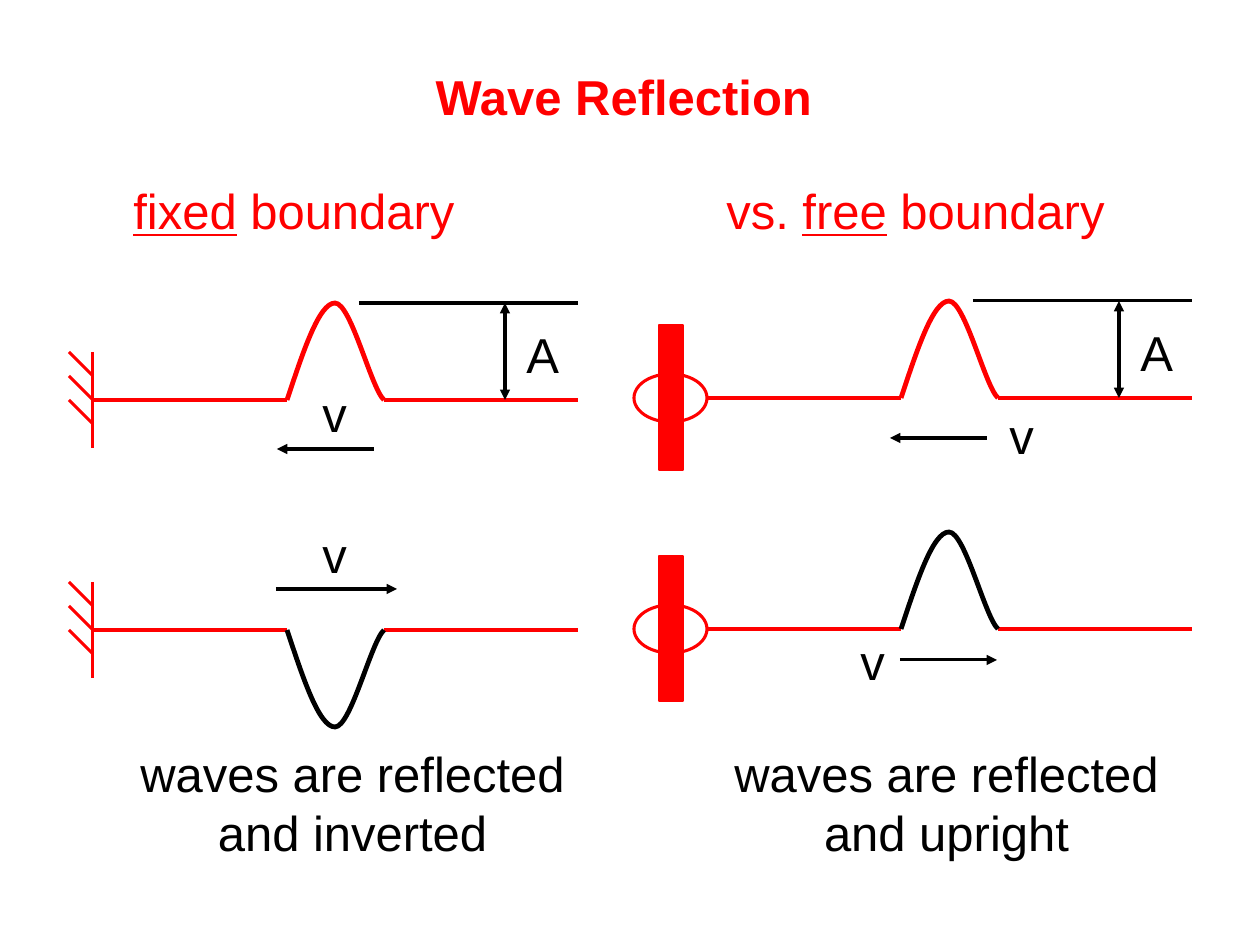
import dataclasses

import pptx
import pptx.dml.color
import pptx.enum.shapes
import pptx.enum.text
import pptx.oxml.ns
import pptx.util
from lxml import etree

EMU_PER_PX = 914400 / 126
PULSE = 97                  # width and height of a pulse
PULSE_START = 194           # from the boundary end of the string
STRING_LENGTH = 485
SHAPES = pptx.enum.shapes.MSO_SHAPE
ALIGN = pptx.enum.text.PP_ALIGN
qn = pptx.oxml.ns.qn


@dataclasses.dataclass(frozen=True)
class Theme:
    red: str = "FF0000"
    black: str = "000000"
    white: str = "FFFFFF"
    font: str = "Arial"
    text_size: float = 28
    thin: float = 1.75
    thick: float = 2.75
    hairline: float = 0.75


THEME = Theme()
FRAME_FORMAT = {
    "word_wrap": False,
    "auto_size": pptx.enum.text.MSO_AUTO_SIZE.SHAPE_TO_FIT_TEXT,
    "vertical_anchor": pptx.enum.text.MSO_ANCHOR.MIDDLE,
}


def px(length):
    return pptx.util.Emu(round(length * EMU_PER_PX))


def rgb(color):
    return pptx.dml.color.RGBColor.from_string(color)


def apply_format(target, values):
    for name, value in values.items():
        setattr(target, name, value)


def set_line(line, color, width):
    line.color.rgb = rgb(color)
    line.width = pptx.util.Pt(width)


# Text: each paragraph is a list of (text, underlined) runs
def write_text(holder, paragraphs, color, align=ALIGN.LEFT, bold=False):
    frame = holder.text_frame
    apply_format(frame, FRAME_FORMAT)
    for index, runs in enumerate(paragraphs):
        paragraph = frame.add_paragraph() if index else frame.paragraphs[0]
        paragraph.alignment = align
        for text, underlined in runs:
            run = paragraph.add_run()
            run.text = text
            apply_format(run.font, {
                "name": THEME.font, "size": pptx.util.Pt(THEME.text_size),
                "bold": bold, "underline": underlined,
            })
            run.font.color.rgb = rgb(color)


def add_text(slide, box, paragraphs, color, align=ALIGN.LEFT):
    label = slide.shapes.add_textbox(*map(px, box))
    write_text(label, paragraphs, color, align)


def add_line(slide, start, end, color, width, arrow=False):
    line = slide.shapes.add_connector(
        pptx.enum.shapes.MSO_CONNECTOR.STRAIGHT, *map(px, (*start, *end)))
    set_line(line.line, color, width)
    if arrow:
        etree.SubElement(line.line._get_or_add_ln(), qn("a:tailEnd"), type="triangle")
    etree.SubElement(line._element.spPr, qn("a:effectLst"))


def add_solid(slide, preset, box, fill, width):
    solid = slide.shapes.add_shape(preset, *map(px, box))
    solid.shadow.inherit = False
    solid.fill.solid()
    solid.fill.fore_color.rgb = rgb(fill)
    set_line(solid.line, THEME.red, width)


# A pulse is two cubic curves; direction is -1 for upright, 1 for inverted
def add_pulse(slide, x, y, color, direction=-1):
    controls = [(16, 48), (32, PULSE), (48, PULSE), (64, PULSE), (84, 12), (PULSE, 0)]
    points = [(px(x + dx), px(y + direction * dy)) for dx, dy in controls]
    builder = slide.shapes.build_freeform(px(x), px(y))
    builder.add_line_segments(points, close=False)
    pulse = builder.convert_to_shape()
    pulse.shadow.inherit = False
    pulse.fill.background()
    set_line(pulse.line, color, THEME.thick)
    # Turn every three segments into one cubic curve
    segments = list(pulse._element.iter(qn("a:lnTo")))
    outline = segments[0].getparent()
    for first in range(0, len(segments), 3):
        curve = etree.SubElement(outline, qn("a:cubicBezTo"))
        for segment in segments[first:first + 3]:
            curve.append(segment[0])
            outline.remove(segment)


def add_string(slide, x, y):
    for start, end in ((0, PULSE_START), (PULSE_START + PULSE, STRING_LENGTH)):
        add_line(slide, (x + start, y), (x + end, y), THEME.red, THEME.thick)


def add_fixed_wall(slide, x, y):
    add_line(slide, (x, y - 48), (x, y + 48), THEME.red, THEME.thin)
    for hatch_y in range(y - 24, y + 25, 24):
        add_line(slide, (x, hatch_y), (x - 24, hatch_y - 24), THEME.red, THEME.thin)


def add_free_ring(slide, x, y):
    add_solid(slide, SHAPES.OVAL, (x - 73, y - 24, 73, 48), THEME.white, THEME.thin)
    add_solid(slide, SHAPES.RECTANGLE, (x - 48, y - 73, 24, 145),
              THEME.red, THEME.hairline)


def add_amplitude(slide, x, y):
    crest, middle, arrow_x = y - PULSE, y - 48, x + 412
    add_line(slide, (x + 266, crest), (x + STRING_LENGTH, crest),
             THEME.black, THEME.thin)
    for tip in (crest, y):
        add_line(slide, (arrow_x, middle), (arrow_x, tip), THEME.black, THEME.thin, True)
    add_text(slide, (x + 421, y - 82, 72, 72), [[("A", False)]], THEME.black)


def add_velocity(slide, start_x, end_x, y, label_at):
    add_line(slide, (start_x, y), (end_x, y), THEME.black, THEME.thin, True)
    add_text(slide, (*label_at, 63, 72), [[("v", False)]], THEME.black)


def main():
    presentation = pptx.Presentation()
    apply_format(presentation, {"slide_width": px(1260), "slide_height": px(945)})
    slide = presentation.slides.add_slide(presentation.slide_layouts[5])

    # Title and column headings
    title = slide.shapes.title
    apply_format(title, dict(zip(("left", "top", "width", "height"),
                                 map(px, (423, 60, 404, 72)))))
    write_text(title, [[("Wave Reflection", False)]], THEME.red, bold=True)
    add_text(slide, (121, 174, 362, 72),
             [[("fixed", True), (" boundary", False)]], THEME.red)
    add_text(slide, (714, 174, 422, 72),
             [[("vs. ", False), ("free", True), (" boundary", False)]], THEME.red)

    # Incoming waves above, reflected waves below
    for x, incoming_y, reflected_y, add_boundary, direction in (
            (93, 400, 630, add_fixed_wall, 1), (707, 398, 629, add_free_ring, -1)):
        for y in (incoming_y, reflected_y):
            add_string(slide, x, y)
            add_boundary(slide, x, y)
        add_pulse(slide, x + PULSE_START, incoming_y, THEME.red)
        add_pulse(slide, x + PULSE_START, reflected_y, THEME.black, direction)
        add_amplitude(slide, x, incoming_y)

    # Directions of travel
    for start_x, end_x, y, label_at in (
            (374, 277, 449, (310, 377)), (276, 397, 589, (310, 518)),
            (987, 890, 438, (997, 399)), (900, 997, 660, (848, 625))):
        add_velocity(slide, start_x, end_x, y, label_at)

    # Conclusions
    for x, outcome in ((127, "and inverted"), (721, "and upright")):
        add_text(slide, (x, 737, 451, 130),
                 [[("waves are reflected", False)], [(outcome, False)]],
                 THEME.black, ALIGN.CENTER)

    presentation.save("out.pptx")


if __name__ == "__main__":
    main()
